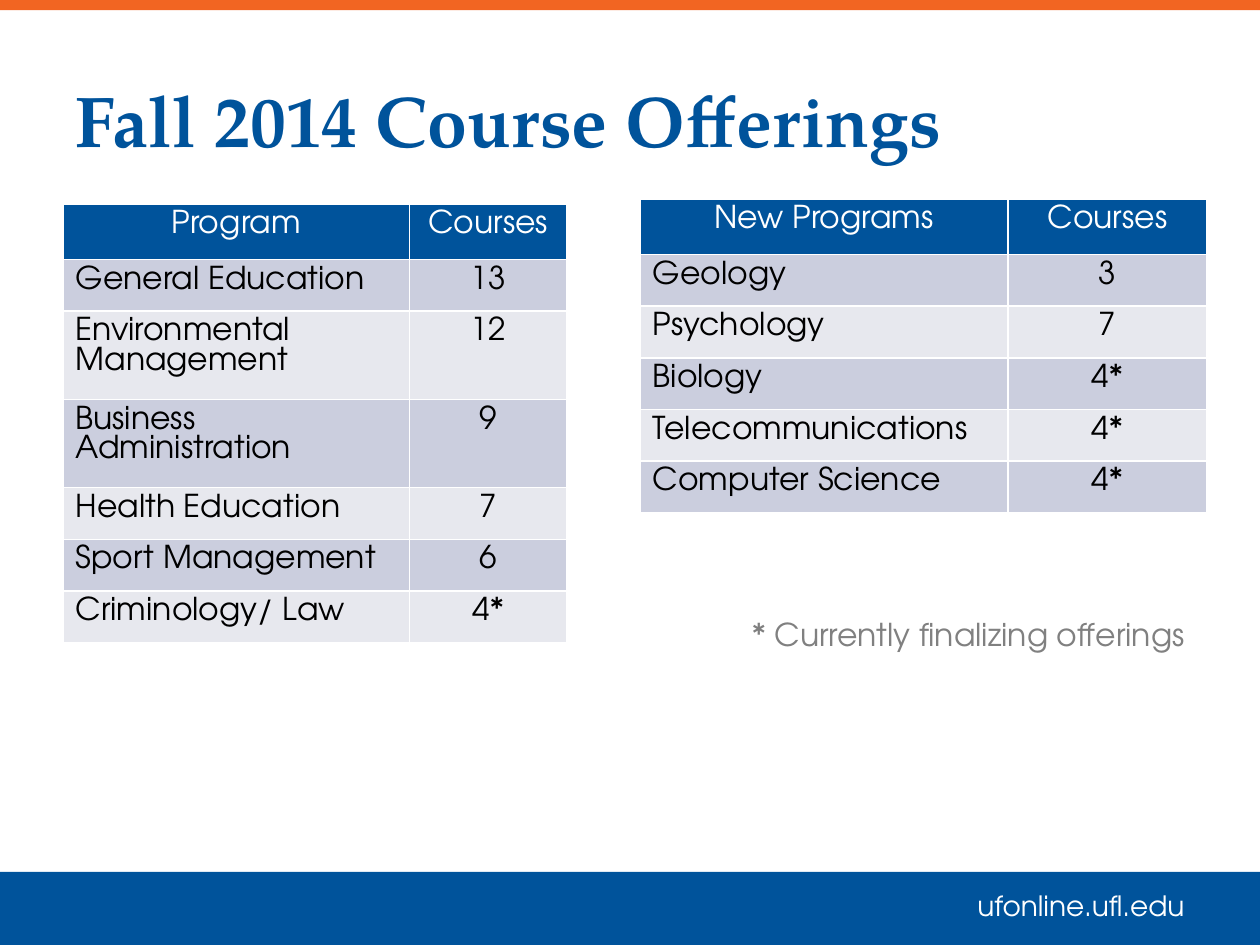
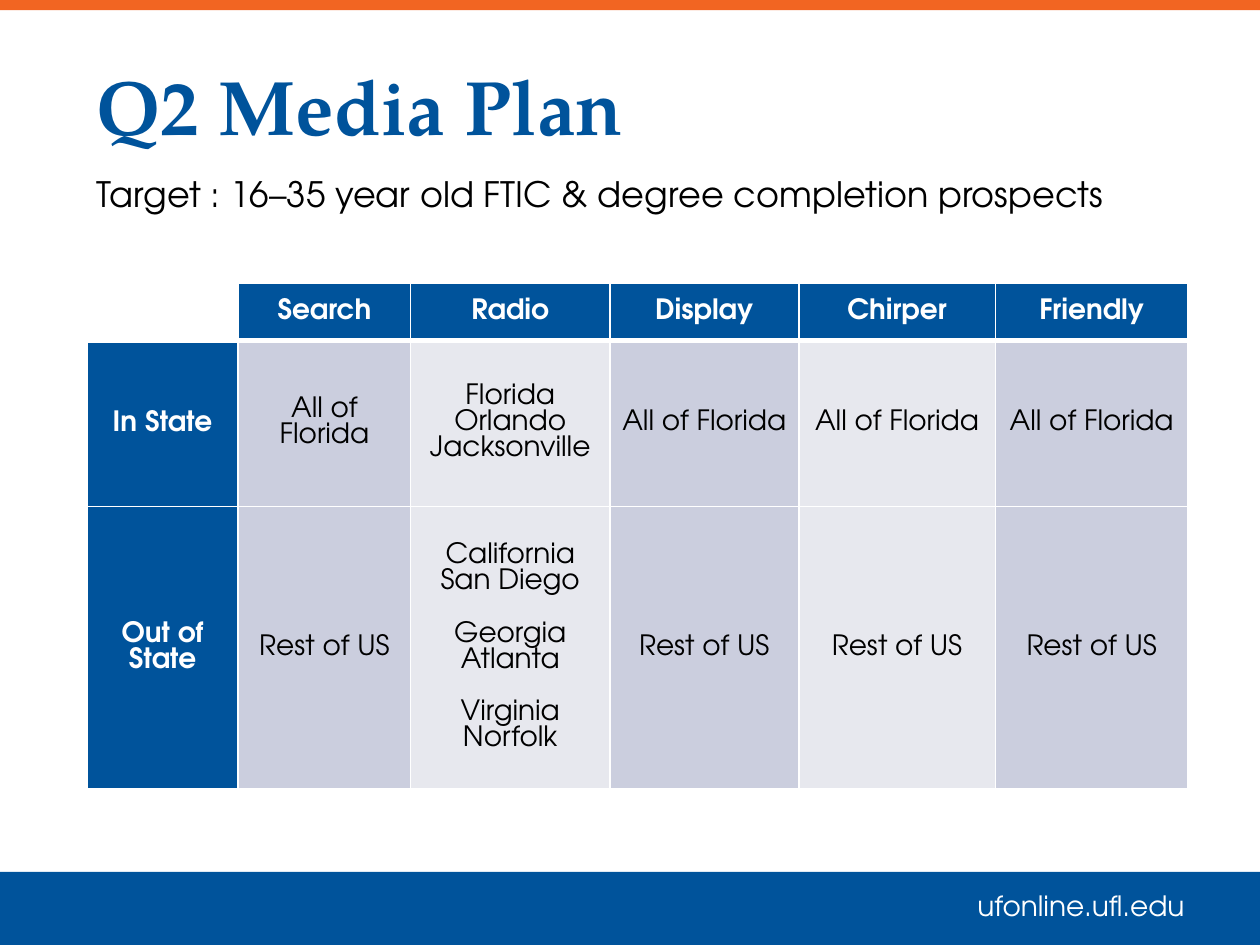
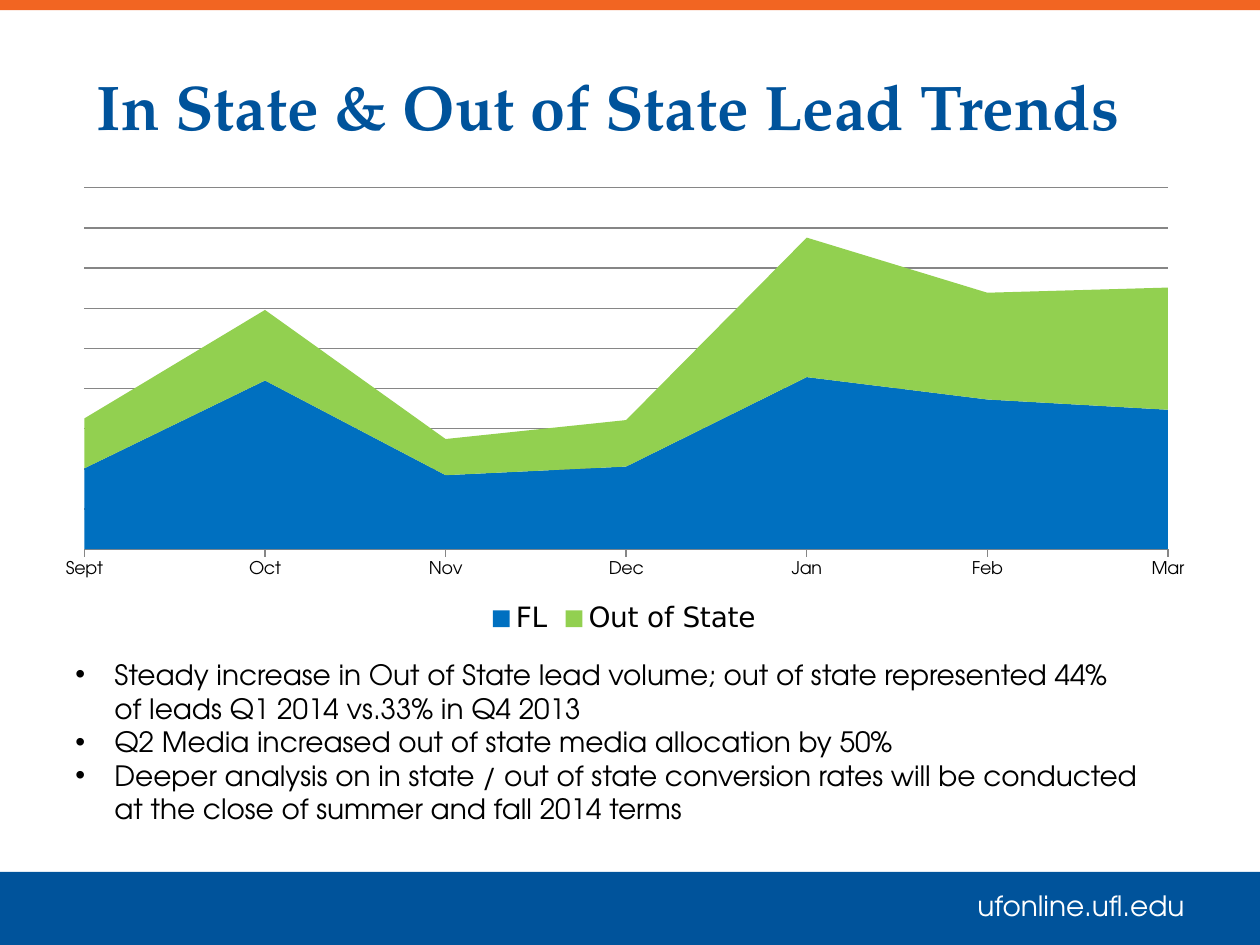
import dataclasses

import lxml.etree
import pptx
import pptx.chart.data
import pptx.dml.color
import pptx.enum.chart
import pptx.enum.shapes
import pptx.enum.text
import pptx.oxml
import pptx.oxml.ns
import pptx.util

Inches = pptx.util.Inches
Pt = pptx.util.Pt
rgb = pptx.dml.color.RGBColor.from_string
ALIGN = pptx.enum.text.PP_ALIGN
ANCHOR = pptx.enum.text.MSO_ANCHOR
qn = pptx.oxml.ns.qn


@dataclasses.dataclass(frozen=True)
class Theme:
    blue: str = "00539B"
    orange: str = "F26522"
    white: str = "FFFFFF"
    black: str = "000000"
    note: str = "808080"
    grid: str = "868686"
    bands: tuple = ("CBCEDE", "E7E8EE")
    series: tuple = ("0070C0", "92D050")
    title_font: str = "TeX Gyre Pagella"
    body_font: str = "TeX Gyre Adventor"
    legend_font: str = "DejaVu Sans"
    bullet_font: str = "Arial"
    subtitle: int = 20
    body: int = 18
    small: int = 16
    axis: int = 10


theme = Theme()


def write(frame, text, size=theme.small, color=theme.black, font=theme.body_font,
          bold=False, align=ALIGN.LEFT, anchor=ANCHOR.TOP, spacing=None,
          group_gap=0, bullet=None):
    """Write one paragraph per line; a blank line starts a spaced group."""
    frame.word_wrap = True
    frame.vertical_anchor = anchor
    first = True
    for group in text.split("\n\n"):
        for number, line in enumerate(group.split("\n")):
            paragraph = frame.paragraphs[0] if first else frame.add_paragraph()
            paragraph.alignment = align
            if spacing:
                paragraph.line_spacing = spacing
            if group_gap and number == 0 and not first:
                paragraph.space_before = Pt(group_gap)
            if bullet:
                properties = paragraph._p.get_or_add_pPr()
                properties.set("marL", str(Inches(0.31)))
                properties.set("indent", str(-Inches(0.31)))
                lxml.etree.SubElement(properties, qn("a:buFont")).set(
                    "typeface", theme.bullet_font)
                lxml.etree.SubElement(properties, qn("a:buChar")).set("char", bullet)
            run = paragraph.add_run()
            run.text = line
            run.font.name = font
            run.font.size = Pt(size)
            run.font.bold = bold
            run.font.color.rgb = rgb(color)
            first = False


def build_table(slide, left, top, widths, heights, rows, by_column=False):
    """Build a table banded by row, or by column with a heading column."""
    grid = slide.shapes.add_table(
        len(rows), len(widths), Inches(left), Inches(top),
        Inches(sum(widths)), Inches(sum(heights))).table
    for column, width in zip(grid.columns, widths):
        column.width = Inches(width)
    for row, height in zip(grid.rows, heights):
        row.height = Inches(height)
    for r, row in enumerate(rows):
        for c, text in enumerate(row):
            cell = grid.cell(r, c)
            heading = r == 0 or (by_column and c == 0)
            band = theme.bands[((c if by_column else r) - 1) % 2]
            if text:
                cell.fill.solid()
                cell.fill.fore_color.rgb = rgb(theme.blue if heading else band)
                write(cell.text_frame, text,
                      size=theme.small if by_column else theme.body,
                      color=theme.white if heading else theme.black,
                      bold=heading and by_column,
                      align=ALIGN.CENTER if heading or by_column or c else ALIGN.LEFT,
                      group_gap=15)
            else:
                cell.fill.background()
            if by_column:
                cell.margin_left = cell.margin_right = Inches(0.05)
                cell.vertical_anchor = ANCHOR.MIDDLE

            # White cell borders, heavier between heading row and body
            for position, side in enumerate(("L", "R", "T", "B")):
                heavy = by_column and (r, side) in ((0, "B"), (1, "T"))
                border = pptx.oxml.parse_xml(
                    f'<a:ln{side} {pptx.oxml.ns.nsdecls("a")} w="{Pt(3 if heavy else 1)}">'
                    f'<a:solidFill><a:srgbClr val="{theme.white}"/></a:solidFill></a:ln{side}>')
                cell._tc.get_or_add_tcPr().insert(position, border)


deck = pptx.Presentation()
deck.slide_width = Inches(10)
deck.slide_height = Inches(7.5)

# Shared bands, footer and titles
headings = [
    ("Fall 2014 Course Offerings", 41, (0.5, 0.33, 9, 1.22)),
    ("Q2 Media Plan", 44, (0.67, 0.42, 8.92, 0.83)),
    ("In State & Out of State Lead Trends", 36, (0.67, 0.42, 8.92, 0.83)),
]
page_bands = [(0, 0.08, theme.orange), (6.92, 0.58, theme.blue)]
for heading, size, place in headings:
    slide = deck.slides.add_slide(deck.slide_layouts[6])
    for top, height, color in page_bands:
        band = slide.shapes.add_shape(
            pptx.enum.shapes.MSO_SHAPE.RECTANGLE,
            0, Inches(top), deck.slide_width, Inches(height))
        band.shadow.inherit = False
        band.fill.solid()
        band.fill.fore_color.rgb = rgb(color)
        band.line.fill.background()
    footer = slide.shapes.add_textbox(Inches(7.5), Inches(7), Inches(2), Inches(0.37))
    write(footer.text_frame, "ufonline.ufl.edu", color=theme.white, align=ALIGN.RIGHT)
    title = slide.shapes.add_textbox(*map(Inches, place))
    write(title.text_frame, heading, size=size, color=theme.blue,
          font=theme.title_font, bold=True, anchor=ANCHOR.MIDDLE)

offerings, media_plan, lead_trends = deck.slides

# Course offerings: current and new programs
current_programs = [
    ("Program", "Courses"),
    ("General Education", "13"),
    ("Environmental Management", "12"),
    ("Business Administration", "9"),
    ("Health Education", "7"),
    ("Sport Management", "6"),
    ("Criminology/ Law", "4*"),
]
new_programs = [
    ("New Programs", "Courses"),
    ("Geology", "3"),
    ("Psychology", "7"),
    ("Biology", "4*"),
    ("Telecommunications", "4*"),
    ("Computer Science", "4*"),
]
for left, top, widths, programs in [
    (0.5, 1.62, (2.75, 1.25), current_programs),
    (5.08, 1.58, (2.92, 1.58), new_programs),
]:
    heights = [0.44] + [0.41] * (len(programs) - 1)
    build_table(offerings, left, top, widths, heights, programs)
footnote = offerings.shapes.add_textbox(Inches(5.08), Inches(4.83), Inches(4.42), Inches(0.4))
write(footnote.text_frame, "* Currently finalizing offerings",
      size=theme.body, color=theme.note, align=ALIGN.RIGHT)

# Media plan: region by channel
target = media_plan.shapes.add_textbox(Inches(0.67), Inches(1.25), Inches(9.33), Inches(0.5))
write(target.text_frame, "Target : 16–35 year old FTIC & degree completion prospects",
      size=theme.subtitle, spacing=1.2)
in_state, out_of_state = "All of Florida", "Rest of US"
channels = [
    ("", "Search", "Radio", "Display", "Chirper", "Friendly"),
    ("In State", in_state, "Florida\nOrlando Jacksonville", in_state, in_state, in_state),
    ("Out of State", out_of_state,
     "California\nSan Diego\n\nGeorgia\nAtlanta\n\nVirginia\nNorfolk",
     out_of_state, out_of_state, out_of_state),
]
build_table(media_plan, 0.69, 2.25, (1.2, 1.37, 1.58, 1.5, 1.56, 1.53),
            (0.45, 1.32, 2.24), channels, by_column=True)

# Lead trends: stacked areas
leads = pptx.chart.data.CategoryChartData()
leads.categories = ["Sept", "Oct", "Nov", "Dec", "Jan", "Feb", "Mar"]
leads.add_series("FL", (47, 98, 43, 48, 100, 87, 81))
leads.add_series("Out of State", (29, 41, 21, 27, 81, 62, 71))
chart_width, chart_height = 9.25, 3.66
trend = lead_trends.shapes.add_chart(
    pptx.enum.chart.XL_CHART_TYPE.AREA_STACKED,
    Inches(0.33), Inches(1.42), Inches(chart_width), Inches(chart_height), leads).chart
trend.has_title = False
trend.font.name = theme.body_font
trend.font.size = Pt(theme.axis)
trend.font.color.rgb = rgb(theme.black)
trend.plots[0].vary_by_categories = False
for area, color in zip(trend.plots[0].series, theme.series):
    area.format.fill.solid()
    area.format.fill.fore_color.rgb = rgb(color)
    area.format.line.fill.background()

months = trend.category_axis
months.has_major_gridlines = False
months.major_tick_mark = pptx.enum.chart.XL_TICK_MARK.OUTSIDE
months.format.line.color.rgb = rgb(theme.grid)
volume = trend.value_axis
volume.visible = False
volume.minimum_scale = 0
volume.maximum_scale = 210
volume.major_unit = 23.33
volume.has_major_gridlines = True
volume.major_gridlines.format.line.color.rgb = rgb(theme.grid)
for crossing in trend._chartSpace.iter(qn("c:crossBetween")):
    crossing.set("val", "midCat")

trend.has_legend = True
trend.legend.position = pptx.enum.chart.XL_LEGEND_POSITION.BOTTOM
trend.legend.include_in_layout = False
trend.legend.font.name = theme.legend_font
trend.legend.font.size = Pt(theme.small)

# Fixed plot area, as shares of the chart frame
plot_area = trend._chartSpace.chart.plotArea
for old_layout in plot_area.findall(qn("c:layout")):
    plot_area.remove(old_layout)
layout = lxml.etree.Element(qn("c:layout"))
manual = lxml.etree.SubElement(layout, qn("c:manualLayout"))
for tag, value in [("layoutTarget", "inner"), ("xMode", "edge"), ("yMode", "edge"),
                   ("x", 0.34 / chart_width), ("y", 0.07 / chart_height),
                   ("w", 8.6 / chart_width), ("h", 2.87 / chart_height)]:
    lxml.etree.SubElement(manual, qn(f"c:{tag}")).set("val", str(value))
plot_area.insert(0, layout)

# Lead trends: findings
findings = lead_trends.shapes.add_textbox(Inches(0.5), Inches(5.17), Inches(8.65), Inches(1.45))
write(findings.text_frame, "\n".join([
    "Steady increase in Out of State lead volume; out of state represented 44% "
    "of leads Q1 2014 vs.33% in Q4 2013",
    "Q2 Media increased out of state media allocation by 50%",
    "Deeper analysis on in state / out of state conversion rates will be conducted "
    "at the close of summer and fall 2014 terms",
]), bullet="•")

deck.save("out.pptx")
